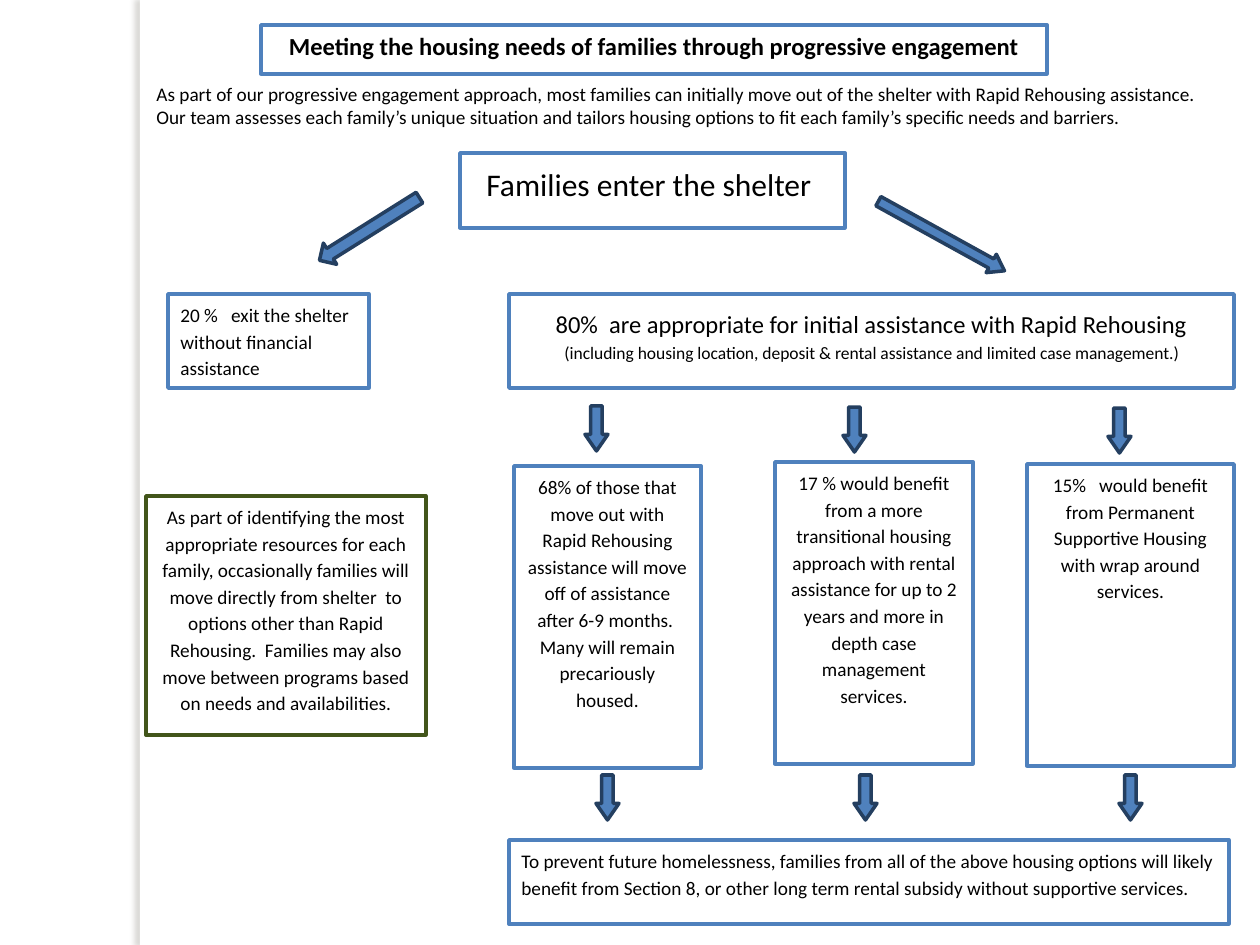
from lxml.etree import SubElement
from pptx import Presentation
from pptx.dml.color import RGBColor
from pptx.enum.shapes import MSO_SHAPE as Shape
from pptx.enum.text import MSO_ANCHOR as Anchor, PP_ALIGN as Align
from pptx.oxml.ns import qn
from pptx.util import Pt

SCALE = 914400 / 126  # EMU per px
COLORS = {"white": "FFFFFF", "black": "000000", "blue": "4F81BD",
          "navy": "243F60", "green": "42551A", "shadow": "736F63"}
LEFT, CENTER = Align.LEFT, Align.CENTER

presentation = Presentation()
presentation.slide_width = round(1260 * SCALE)
presentation.slide_height = round(945 * SCALE)
slide = presentation.slides.add_slide(presentation.slide_layouts[6])


def add_shape(kind, bounds, fill, line=None):
    shape = slide.shapes.add_shape(kind, *[round(v * SCALE) for v in bounds])
    shape.shadow.inherit = False
    shape.fill.solid()
    shape.fill.fore_color.rgb = RGBColor.from_string(COLORS[fill])
    if line:
        shape.line.color.rgb = RGBColor.from_string(COLORS[line])
        shape.line.width = Pt(2)
    else:
        shape.line.fill.background()
    return shape


def write(shape, runs, align, spacing):
    frame = shape.text_frame
    frame.word_wrap = True
    frame.vertical_anchor = Anchor.TOP
    paragraph = frame.paragraphs[0]
    paragraph.alignment = align
    paragraph.line_spacing = spacing
    paragraph.space_after = Pt(10)
    for text, size in runs:
        run = paragraph.add_run()
        run.text = text
        run.font.name = "Calibri"
        run.font.size = Pt(size)
        run.font.color.rgb = RGBColor.from_string(COLORS["black"])


# Left page edge with a soft shadow
edge = add_shape(Shape.RECTANGLE, (140, 0, 10, 945), "white")
effects = edge._element.spPr.find(qn("a:effectLst"))
shadow = SubElement(effects, qn("a:outerShdw"), blurRad=str(Pt(3)),
                    dist=str(Pt(3)), dir="10800000", rotWithShape="0")
shadow_color = SubElement(shadow, qn("a:srgbClr"), val=COLORS["shadow"])
SubElement(shadow_color, qn("a:alpha"), val="25000")

# Title
title = add_shape(Shape.RECTANGLE, (261, 25, 786, 49), "white", "blue")
write(title, [("Meeting the housing needs of families through progressive engagement", 14)],
      CENTER, 1.0)
title.text_frame.paragraphs[0].runs[0].font.bold = True

# Introduction
intro = slide.shapes.add_textbox(*[round(v * SCALE) for v in (144, 76, 1081, 78)])
write(intro, [("As part of our progressive engagement approach, most families can initially "
               "move out of the shelter with Rapid Rehousing assistance. Our team assesses "
               "each family’s unique situation and tailors housing options to fit each "
               "family’s specific needs and barriers.", 11)], LEFT, 1.0)

# Flow boxes: bounds, line colour, alignment, runs
boxes = [
    ((460, 153, 385, 75), "blue", CENTER, [("Families enter the shelter ", 18)]),
    ((168, 294, 201, 94), "blue", LEFT,
     [("20 %   exit the shelter without financial assistance", 11)]),
    ((509, 294, 725, 94), "blue", CENTER,
     [("80%  are appropriate for initial assistance with Rapid Rehousing", 14),
      (" ", 16),
      ("(including housing location, deposit & rental assistance and limited "
       "case management.)", 10)]),
    ((514, 466, 187, 302), "blue", CENTER,
     [("68% of those that move out with Rapid Rehousing assistance will move off of "
       "assistance after 6-9 months.  Many will remain precariously housed.", 11)]),
    ((775, 462, 198, 302), "blue", CENTER,
     [("17 % would benefit from a more transitional housing approach with rental "
       "assistance for up to 2 years and more in depth case management services.", 11)]),
    ((1027, 464, 207, 302), "blue", CENTER,
     [("15%   would benefit from Permanent Supportive Housing with wrap around "
       "services.", 11)]),
    ((146, 496, 280, 239), "green", CENTER,
     [("As part of identifying the most appropriate resources for each family, "
       "occasionally families will move directly from shelter  to options other than "
       "Rapid Rehousing.  Families may also move between programs based on needs and "
       "availabilities.", 11)]),
    ((509, 840, 720, 84), "blue", LEFT,
     [("To prevent future homelessness, families from all of the above housing options "
       "will likely benefit from Section 8, or other long term rental subsidy without "
       "supportive services.", 11)]),
]
for bounds, line, align, runs in boxes:
    write(add_shape(Shape.RECTANGLE, bounds, "white", line), runs, align, 1.15)

# Arrows: bounds, rotation, head length
arrows = [((357, 170, 25, 118), 57.9, 0.5), ((931, 164, 21, 144), 298.9, 0.72)]
for left, top in [(585, 406), (843, 407), (1108, 408),
                  (596, 775), (854, 775), (1119, 775)]:
    arrows.append(((left, top, 23, 45), 0, 0.72))
for bounds, rotation, head in arrows:
    arrow = add_shape(Shape.DOWN_ARROW, bounds, "blue", "navy")
    arrow.rotation = rotation
    arrow.adjustments[0] = 0.5
    arrow.adjustments[1] = head

presentation.save("out.pptx")
